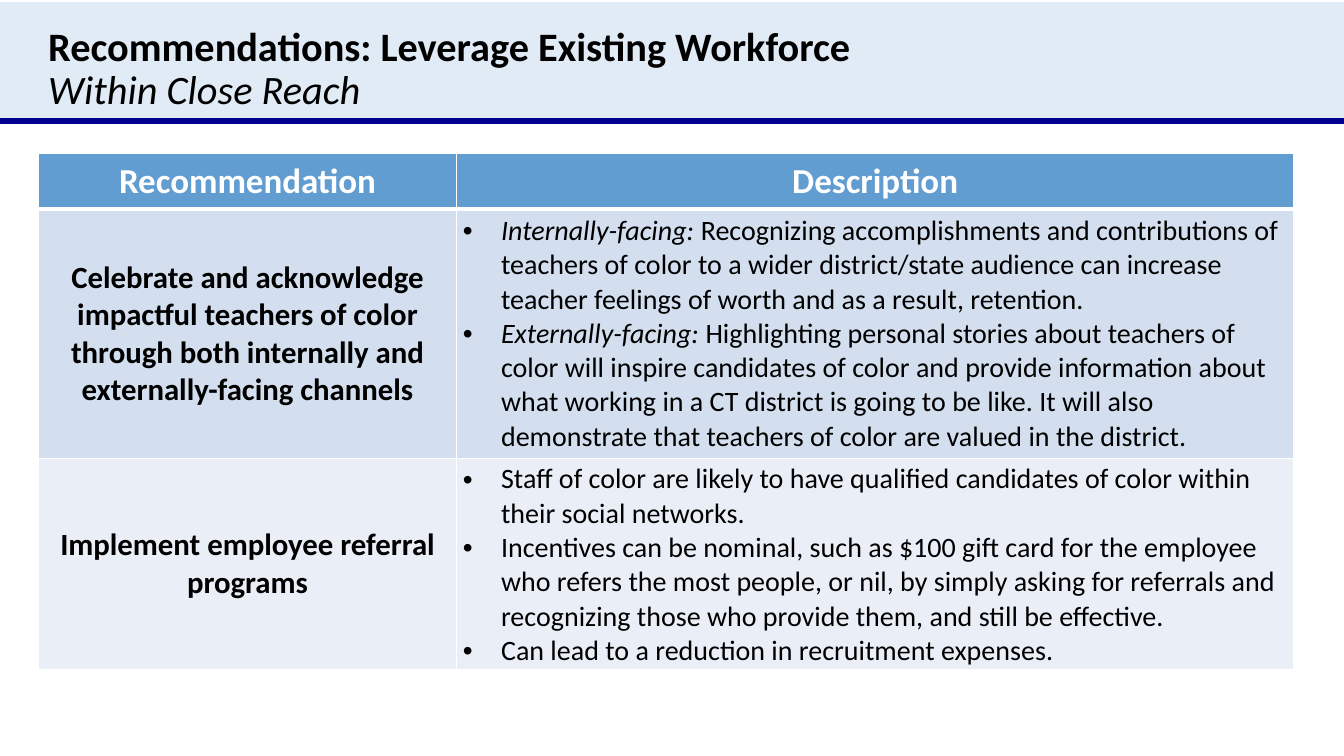
from dataclasses import dataclass

from lxml.etree import SubElement
from pptx import Presentation
from pptx.dml.color import RGBColor
from pptx.enum.shapes import MSO_CONNECTOR, MSO_SHAPE
from pptx.enum.text import MSO_ANCHOR, PP_ALIGN
from pptx.oxml.ns import qn
from pptx.slide import Slide
from pptx.table import _Cell
from pptx.text.text import TextFrame
from pptx.util import Inches, Pt


@dataclass(frozen=True)
class Theme:
    """Colours, font and type sizes of the slide."""
    font: str = "Calibri"
    black: str = "000000"
    white: str = "FFFFFF"
    band: str = "E0EBF6"
    rule: str = "000090"
    header: str = "629DD1"
    rows: tuple[str, str] = ("D3DFEE", "EAEFF7")
    title_size: float = 28.8
    header_size: float = 25
    label_size: float = 22
    body_size: float = 20


@dataclass(frozen=True)
class Span:
    """A stretch of text in one style."""
    text: str
    bold: bool = False
    italic: bool = False
    break_after: bool = False


@dataclass(frozen=True)
class Recommendation:
    """One table row: a label and its bullet points."""
    label: str
    points: list[list[Span]]


T = Theme()
HEADINGS = ["Recommendation", "Description"]
COL_WIDTHS = [4.15, 8.3]
ROW_HEIGHTS = [0.54, 2.47, 2.1]
TITLE = [
    Span("Recommendations: Leverage Existing Workforce", bold=True, break_after=True),
    Span("Within Close Reach", italic=True),
]
RECOMMENDATIONS = [
    Recommendation(
        "Celebrate and acknowledge impactful teachers of color through both "
        "internally and externally-facing channels",
        [
            [Span("Internally-facing: ", italic=True),
             Span("Recognizing accomplishments and contributions of teachers of color "
                  "to a wider district/state audience can increase teacher feelings of "
                  "worth and as a result, retention.")],
            [Span("Externally-facing: ", italic=True),
             Span("Highlighting personal stories about teachers of color will inspire "
                  "candidates of color and provide information about what working in a "
                  "CT district is going to be like. It will also demonstrate that "
                  "teachers of color are valued in the district.")],
        ],
    ),
    Recommendation(
        "Implement employee referral programs",
        [
            [Span("Staff of color are likely to have qualified candidates of color "
                  "within their social networks.")],
            [Span("Incentives can be nominal, such as $100 gift card for the employee "
                  "who refers the most people, or nil, by simply asking for referrals "
                  "and recognizing those who provide them, and still be effective.")],
            [Span("Can lead to a reduction in recruitment expenses.")],
        ],
    ),
]


def write(tf: TextFrame, paragraphs: list[list[Span]], *, size: float,
          color: str = T.black, align: PP_ALIGN = PP_ALIGN.LEFT,
          bullet: bool = False, spacing: float = 1.0) -> None:
    """Fill a text frame with formatted paragraphs."""
    tf.word_wrap = True
    for i, spans in enumerate(paragraphs):
        p = tf.add_paragraph() if i else tf.paragraphs[0]
        p.alignment = align
        p.line_spacing = spacing
        if bullet:
            pPr = p._p.get_or_add_pPr()
            pPr.set("marL", str(Inches(0.38)))
            pPr.set("indent", str(-Inches(0.38)))
            SubElement(pPr, qn("a:buFont"), typeface="Arial")
            SubElement(pPr, qn("a:buChar"), char="•")
        for span in spans:
            r = p.add_run()
            r.text = span.text
            r.font.name = T.font
            r.font.size = Pt(size)
            r.font.bold = span.bold
            r.font.italic = span.italic
            r.font.color.rgb = RGBColor.from_string(color)
            if span.break_after:
                p.add_line_break()


def style_cell(cell: _Cell, fill: str, *, margins: tuple[float, float],
               bottom: float = 1, top: float = 1) -> None:
    """Set a cell's borders, fill, margins and anchor."""
    cell.margin_left = cell.margin_right = Inches(margins[0])
    cell.margin_top = cell.margin_bottom = Inches(margins[1])
    cell.vertical_anchor = MSO_ANCHOR.MIDDLE
    tcPr = cell._tc.get_or_add_tcPr()
    for side, width in {"L": 1, "R": 1, "T": top, "B": bottom}.items():
        ln = SubElement(tcPr, qn(f"a:ln{side}"), w=str(Pt(width)))
        SubElement(SubElement(ln, qn("a:solidFill")), qn("a:srgbClr"), val=T.white)
    cell.fill.solid()
    cell.fill.fore_color.rgb = RGBColor.from_string(fill)


def add_title(s: Slide) -> None:
    """Draw the title band, its rule and the title."""
    sp = s.shapes.add_shape(MSO_SHAPE.RECTANGLE, 0, Inches(0.02), Inches(13.33), Inches(1.19))
    sp.shadow.inherit = False
    sp.fill.solid()
    sp.fill.fore_color.rgb = RGBColor.from_string(T.band)
    sp.line.fill.background()
    rule = s.shapes.add_connector(MSO_CONNECTOR.STRAIGHT, 0, Inches(1.2), Inches(13.33), Inches(1.2))
    rule.line.color.rgb = RGBColor.from_string(T.rule)
    rule.line.width = Pt(4.5)
    SubElement(rule._element.spPr, qn("a:effectLst"))
    tf = s.shapes.add_textbox(Inches(0.38), Inches(0.19), Inches(11.64), Inches(1.01)).text_frame
    tf.vertical_anchor = MSO_ANCHOR.MIDDLE
    write(tf, [TITLE], size=T.title_size, spacing=0.9)


def add_recommendations(s: Slide) -> None:
    """Draw the table of recommendations."""
    tbl = s.shapes.add_table(
        len(ROW_HEIGHTS), len(COL_WIDTHS), Inches(0.38), Inches(1.52),
        Inches(sum(COL_WIDTHS)), Inches(sum(ROW_HEIGHTS))).table
    for col, width in zip(tbl.columns, COL_WIDTHS):
        col.width = Inches(width)
    for row, height in zip(tbl.rows, ROW_HEIGHTS):
        row.height = Inches(height)
    for cell, heading in zip(tbl.rows[0].cells, HEADINGS):
        style_cell(cell, T.header, margins=(0.14, 0.07), bottom=3)
        write(cell.text_frame, [[Span(heading, bold=True)]], size=T.header_size,
              color=T.white, align=PP_ALIGN.CENTER)
    for i, (rec, fill) in enumerate(zip(RECOMMENDATIONS, T.rows), start=1):
        label, description = tbl.rows[i].cells
        for cell in (label, description):
            style_cell(cell, fill, margins=(0.06, 0.04), top=3 if i == 1 else 1)
        write(label.text_frame, [[Span(rec.label, bold=True)]], size=T.label_size,
              align=PP_ALIGN.CENTER)
        write(description.text_frame, rec.points, size=T.body_size, bullet=True)


def main() -> None:
    """Build and save the slide."""
    prs = Presentation()
    prs.slide_width, prs.slide_height = Inches(13.33), Inches(7.5)
    s = prs.slides.add_slide(prs.slide_layouts[6])
    add_title(s)
    add_recommendations(s)
    prs.save("out.pptx")


if __name__ == "__main__":
    main()
